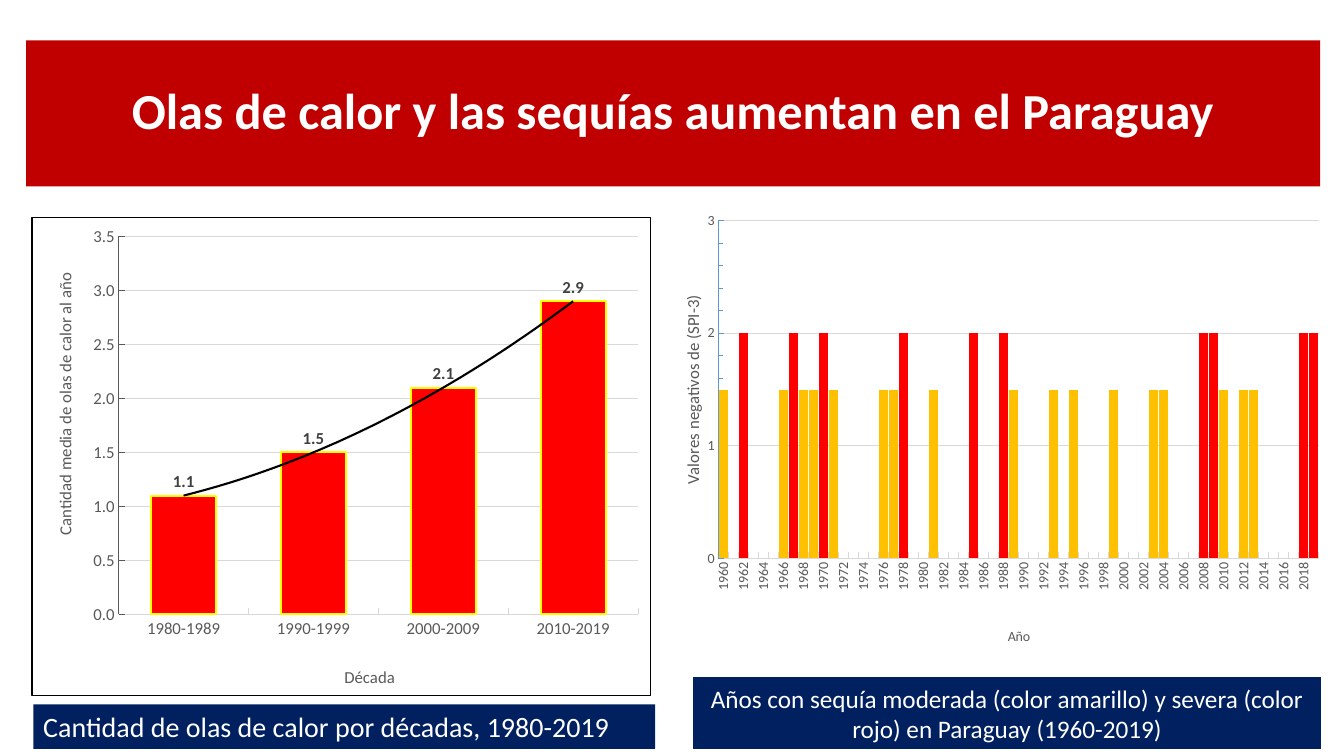
from dataclasses import dataclass

from pptx import Presentation
from pptx.chart.data import CategoryChartData
from pptx.dml.color import RGBColor
from pptx.enum.chart import XL_CHART_TYPE as ChartType, XL_LABEL_POSITION as LabelPos, XL_TICK_MARK as Tick
from pptx.enum.shapes import MSO_SHAPE as Shape
from pptx.enum.text import MSO_ANCHOR as Anchor, PP_ALIGN as Align
from pptx.oxml import parse_xml
from pptx.oxml.ns import nsdecls
from pptx.util import Cm, Pt


@dataclass(frozen=True)
class Theme:
    font: str = "Calibri"
    white: str = "FFFFFF"
    black: str = "000000"
    banner: str = "C00000"
    navy: str = "002060"
    red: str = "FF0000"
    amber: str = "FFC000"
    yellow: str = "FFFF00"
    blue: str = "5B9BD5"
    gray: str = "595959"
    dark: str = "404040"
    pale: str = "D9D9D9"
    title: int = 36
    caption: int = 20
    note: int = 18
    label: int = 12
    small: int = 10


def style_font(font, size, color, bold=False):
    font.name = THEME.font
    font.size = Pt(size)
    font.bold = bold
    font.color.rgb = RGBColor.from_string(color)


def write_text(frame, text, size, color, bold=False, align=None, spacing=None):
    para = frame.paragraphs[0]
    if align is not None:
        para.alignment = align
    if spacing:
        para.line_spacing = spacing
    span = para.add_run()
    span.text = text
    style_font(span.font, size, color, bold)


def style_line(line, color, width):
    line.color.rgb = RGBColor.from_string(color)
    line.width = Pt(width)


def make_layout(x, y, w=None, h=None):
    inner = '<c:layoutTarget val="inner"/>' if w else ""
    modes = '<c:xMode val="edge"/><c:yMode val="edge"/>'
    sides = "".join(f'<c:{side} val="{value}"/>'
                    for side, value in zip("xywh", (x, y, w, h)) if value is not None)
    return parse_xml(f'<c:layout {nsdecls("c")}><c:manualLayout>{inner}{modes}{sides}'
                     '</c:manualLayout></c:layout>')


def line_properties(tag, color, width):
    return (f'<c:{tag} {nsdecls("c", "a")}><a:ln w="{Pt(width)}"><a:solidFill>'
            f'<a:srgbClr val="{color}"/></a:solidFill></a:ln></c:{tag}>')


class SlideBuilder:
    def __init__(self, theme, page):
        self.theme = theme
        self.page = page

    def box(self, at, fill, text, size, line=None, **text_format):
        box = self.page.shapes.add_shape(Shape.RECTANGLE, *map(Cm, at))
        box.shadow.inherit = False
        box.fill.solid()
        box.fill.fore_color.rgb = RGBColor.from_string(fill)
        if line:
            style_line(box.line, line, 0.75)
        else:
            box.line.fill.background()
        box.text_frame.word_wrap = True
        box.text_frame.vertical_anchor = Anchor.MIDDLE
        write_text(box.text_frame, text, size, self.theme.white, **text_format)

    def column_chart(self, at, cats, values, gap, size, plot_at):
        data = CategoryChartData()
        data.categories = cats
        data.add_series("Series 1", values)
        frame = self.page.shapes.add_chart(ChartType.COLUMN_CLUSTERED, *map(Cm, at), data)
        chart = frame.chart
        chart.has_title = False
        chart.has_legend = False
        style_font(chart.font, size, self.theme.black)
        plot = chart.plots[0]
        plot.gap_width = gap
        plot.overlap = -27
        plot.vary_by_categories = False
        series = plot.series[0]
        series.invert_if_negative = False
        series.format.fill.solid()
        series.format.fill.fore_color.rgb = RGBColor.from_string(self.theme.red)
        area = chart._chartSpace.xpath("c:chart/c:plotArea")[0]
        for old in area.xpath("c:layout"):
            area.remove(old)
        area.insert(0, make_layout(*plot_at))
        return chart

    def axis(self, axis, title, title_at, size, title_size, line, upright=False):
        axis.has_title = True
        write_text(axis.axis_title.text_frame, title, title_size, self.theme.gray)
        heading = axis.axis_title._element
        for old in heading.xpath("c:layout"):
            heading.remove(old)
        heading.xpath("c:tx")[0].addnext(make_layout(*title_at))
        heading.xpath(".//a:bodyPr")[0].set("rot", "-5400000" if upright else "0")
        axis.major_tick_mark = Tick.INSIDE
        style_font(axis.tick_labels.font, size, self.theme.gray)
        style_line(axis.format.line, line, 0.75)

    def value_scale(self, axis, top, step, number_format):
        axis.minimum_scale = 0
        axis.maximum_scale = top
        axis.major_unit = step
        axis.has_major_gridlines = True
        style_line(axis.major_gridlines.format.line, self.theme.pale, 0.75)
        axis.tick_labels.number_format = number_format
        axis.tick_labels.number_format_is_linked = False

    def border(self, chart):
        chart._chartSpace.xpath("c:chart")[0].addnext(
            parse_xml(line_properties("spPr", self.theme.black, 1)))

    def value_labels(self, plot):
        plot.has_data_labels = True
        labels = plot.data_labels
        labels.show_value = True
        labels.number_format = "0.0"
        labels.number_format_is_linked = False
        labels.position = LabelPos.OUTSIDE_END
        style_font(labels.font, self.theme.label, self.theme.dark, bold=True)

    def trend(self, series):
        series._element.xpath("c:cat")[0].addprevious(parse_xml(
            f'<c:trendline {nsdecls("c")}>{line_properties("spPr", self.theme.black, 1.5)}'
            '<c:trendlineType val="poly"/><c:order val="2"/>'
            '<c:dispRSqr val="0"/><c:dispEq val="0"/></c:trendline>'))

    def heat_waves(self):
        theme = self.theme
        chart = self.column_chart(
            (0.79, 5.46, 15.62, 12.09), ["1980-1989", "1990-1999", "2000-2009", "2010-2019"],
            [1.1, 1.5, 2.1, 2.9], 100, theme.label, (0.14, 0.04, 0.84, 0.79))
        self.axis(chart.category_axis, "Década", (0.5, 0.93), theme.label, theme.label, theme.pale)
        self.axis(chart.value_axis, "Cantidad media de olas de calor al año", (0.03, 0.11),
                  theme.label, theme.label, theme.gray, upright=True)
        self.value_scale(chart.value_axis, 3.5, 0.5, "0.0")
        self.border(chart)
        plot = chart.plots[0]
        style_line(plot.series[0].format.line, theme.yellow, 1.5)
        self.value_labels(plot)
        self.trend(plot.series[0])

    def droughts(self):
        theme = self.theme
        moderate = {1960, 1966, 1968, 1969, 1971, 1976, 1977, 1981, 1989, 1993,
                    1995, 1999, 2003, 2004, 2010, 2012, 2013}
        severe = {1962, 1967, 1970, 1978, 1985, 1988, 2008, 2009, 2018, 2019}
        years = range(1960, 2020)
        values = [1.5 if year in moderate else 2 if year in severe else None for year in years]
        chart = self.column_chart(
            (16.76, 5.08, 16.81, 11.99), [str(year) for year in years], values,
            10, theme.small, (0.08, 0.04, 0.9, 0.71))
        years_axis = chart.category_axis
        self.axis(years_axis, "Año", (0.51, 0.89), theme.small, theme.small, theme.pale)
        years_axis._element.xpath("c:txPr/a:bodyPr")[0].set("rot", "-5400000")
        years_axis._element.xpath("c:noMultiLvlLbl")[0].addprevious(
            parse_xml(f'<c:tickLblSkip {nsdecls("c")} val="2"/>'))
        self.axis(chart.value_axis, "Valores negativos de (SPI-3)", (0.02, 0.19),
                  theme.small, theme.label, theme.blue, upright=True)
        self.value_scale(chart.value_axis, 3, 1, "General")
        chart.value_axis.minor_tick_mark = Tick.INSIDE
        for index, year in enumerate(years):
            if year in moderate:
                fill = chart.plots[0].series[0].points[index].format.fill
                fill.solid()
                fill.fore_color.rgb = RGBColor.from_string(theme.amber)


THEME = Theme()


def main():
    deck = Presentation()
    deck.slide_width, deck.slide_height = Cm(33.87), Cm(19.05)
    builder = SlideBuilder(THEME, deck.slides.add_slide(deck.slide_layouts[6]))
    builder.box((0.66, 1.02, 32.61, 3.68), THEME.banner,
                "Olas de calor y las sequías aumentan en el Paraguay",
                THEME.title, bold=True, align=Align.CENTER, spacing=0.9)
    builder.heat_waves()
    builder.box((0.84, 17.75, 15.67, 1.12), THEME.navy,
                "Cantidad de olas de calor por décadas, 1980-2019", THEME.caption, align=Align.LEFT)
    builder.droughts()
    builder.box((17.48, 17.07, 15.8, 1.8), THEME.navy,
                "Años con sequía moderada (color amarillo) y severa (color rojo) en Paraguay (1960-2019)",
                THEME.note, line=THEME.navy, align=Align.CENTER)
    deck.save("out.pptx")


if __name__ == "__main__":
    main()
